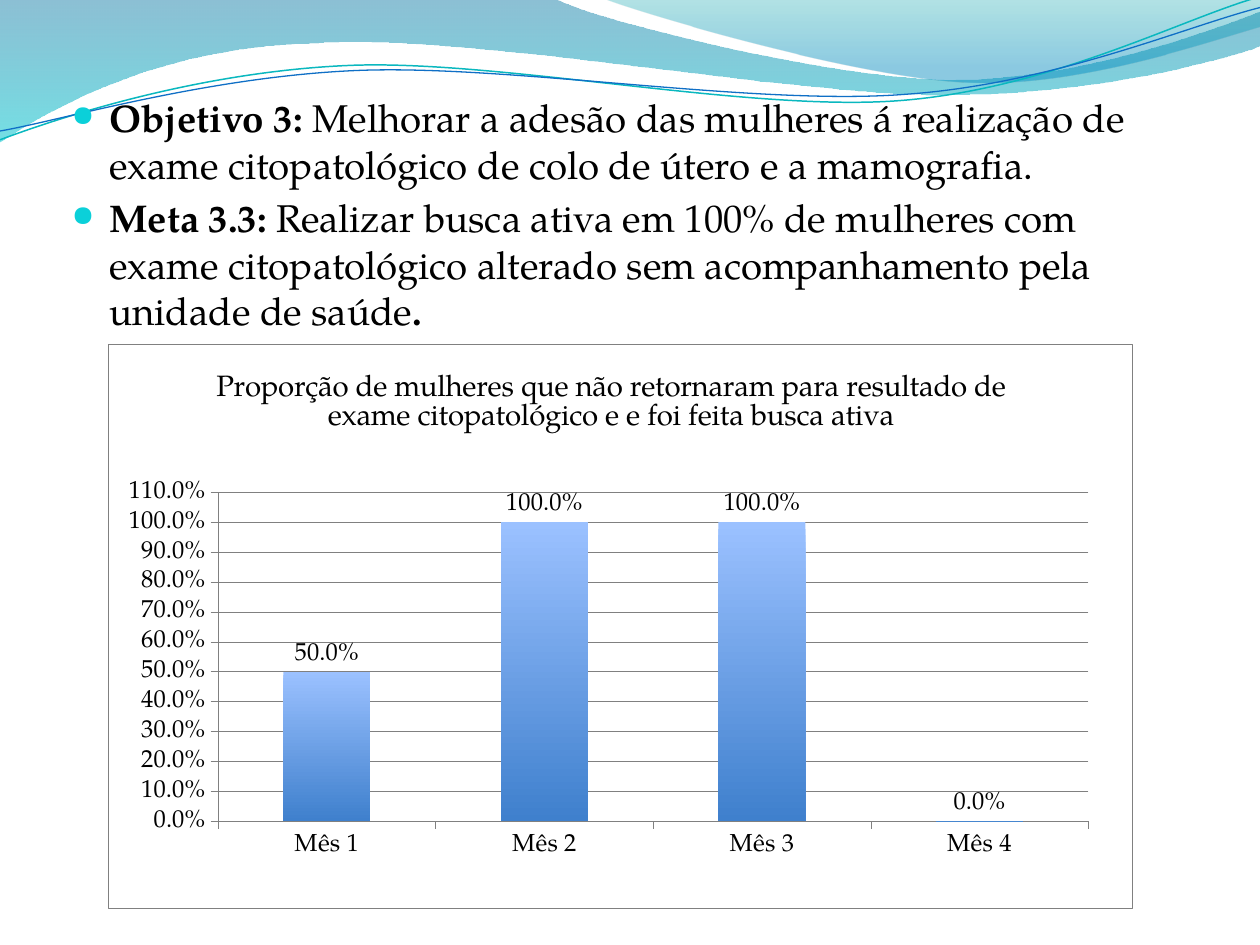
"""Build the slide on objective 3, target 3.3, with its monthly column chart."""
import lxml.etree
import pptx
import pptx.chart.data
import pptx.dml.color
import pptx.enum.chart
import pptx.oxml
import pptx.oxml.ns
import pptx.util
from pptx.oxml.ns import qn
from pptx.util import Inches, Pt

FONT = "TeX Gyre Pagella"
GREY = "808080"
BODY_SIZE = 22

GOALS = [
    [("Objetivo 3: ", True),
     ("Melhorar a adesão das mulheres á realização de exame citopatológico "
      "de colo de útero e a mamografia.", False)],
    [("Meta 3.3:", True),
     (" Realizar busca ativa em 100% de mulheres com exame citopatológico "
      "alterado sem acompanhamento pela unidade de saúde", False),
     (".", True)],
]
CHART_TITLE = ("Proporção de mulheres que não retornaram para resultado de "
               "exame citopatológico e e foi feita busca ativa")
MONTHS = ["Mês 1", "Mês 2", "Mês 3", "Mês 4"]
SHARES = [0.5, 1, 1, 0]
BAR_STOPS = [(0, "9BC1FF", 100), (1, "3F80CD", 100)]

BANDS = [
    ([(0, 0), (4.4, -0.01),
      (4.76, 0.17, 6.64, 0.63, 7.58, 0.63), (8.53, 0.63, 9.58, 0.26, 10, 0.09),
      (10.01, 0.36),
      (9.83, 0.44, 8.7, 0.76, 7.46, 0.75), (6.22, 0.75, 3.82, 0.28, 2.57, 0.34),
      (1.29, 0.36, 0.46, 0.83, -0.01, 1.13)],
     [(0, "0074A1", 45), (1, "00C6CF", 55)]),
    ([(4.79, -0.01),
      (5.09, 0.11, 6.82, 0.62, 7.69, 0.65), (8.56, 0.69, 9.61, 0.32, 10, 0.21),
      (10, 0)],
     [(0, "00A1A9", 30), (0.8, "008BBF", 45)]),
]
RIPPLES = [
    ([(0, 1.11),
      (0.48, 0.93, 1.58, 0.57, 2.77, 0.52), (3.95, 0.47, 5.93, 0.89, 7.13, 0.8),
      (8.33, 0.71, 9.38, 0.15, 9.98, -0.02)], "0AB8BF", 0.85),
    ([(0, 1.04),
      (0.47, 0.96, 1.64, 0.61, 2.83, 0.56), (4.03, 0.51, 5.97, 0.84, 7.17, 0.75),
      (8.36, 0.67, 9.41, 0.21, 10, 0.06)], "0F6FC6", 0.75),
]


def rgb(value):
    return pptx.dml.color.RGBColor.from_string(value)


def set_gradient(fill, stops):
    fill.gradient()
    fill.gradient_angle = 270
    for stop, (position, color, _) in zip(fill.gradient_stops, stops):
        stop.position = position
        stop.color.rgb = rgb(color)


def set_line(line, color, width):
    line.color.rgb = rgb(color)
    line.width = Pt(width)


def add_wave(slide, segments, close):
    anchors = [(Inches(segment[-2]), Inches(segment[-1])) for segment in segments]
    builder = slide.shapes.build_freeform(*anchors[0])
    builder.add_line_segments(anchors[1:], close=close)
    wave = builder.convert_to_shape()
    wave.shadow.inherit = False
    edges = list(wave._element.iter(qn("a:lnTo")))
    for edge, segment in zip(edges, segments[1:]):
        if len(segment) == 6:
            edge.tag = qn("a:cubicBezTo")
            for index, (x, y) in enumerate((segment[:2], segment[2:4])):
                control = lxml.etree.Element(
                    qn("a:pt"), x=str(Inches(x) - builder.shape_offset_x),
                    y=str(Inches(y) - builder.shape_offset_y))
                edge.insert(index, control)
    return wave


def add_header(slide):
    for segments, stops in BANDS:
        band = add_wave(slide, segments, True)
        set_gradient(band.fill, stops)
        band.line.fill.background()
        colors = band._element.spPr.iter(qn("a:srgbClr"))
        for color, (_, _, opacity) in zip(colors, stops):
            lxml.etree.SubElement(color, qn("a:alpha"), val=str(opacity * 1000))
    for segments, color, width in RIPPLES:
        ripple = add_wave(slide, segments, False)
        ripple.fill.background()
        set_line(ripple.line, color, width)


def add_goals(slide):
    frame = slide.shapes.add_textbox(Inches(0.47), Inches(0.7), Inches(9), Inches(2.11)).text_frame
    frame.word_wrap = True
    for index, goal in enumerate(GOALS):
        paragraph = frame.add_paragraph() if index else frame.paragraphs[0]
        paragraph.space_before = Pt(BODY_SIZE * 0.2)
        properties = paragraph._p.get_or_add_pPr()
        properties.set("marL", str(Inches(0.3)))
        properties.set("indent", str(-Inches(0.3)))
        color = lxml.etree.SubElement(properties, qn("a:buClr"))
        lxml.etree.SubElement(color, qn("a:srgbClr"), val="0BD0D9")
        lxml.etree.SubElement(properties, qn("a:buSzPct"), val="75000")
        lxml.etree.SubElement(properties, qn("a:buChar"), char="●")
        for text, bold in goal:
            run = paragraph.add_run()
            run.text = text
            set_font(run.font, BODY_SIZE, bold)


def set_font(font, size, bold=False):
    font.name = FONT
    font.size = Pt(size)
    font.bold = bold
    font.color.rgb = rgb("000000")


def set_layout(parent, index, **settings):
    for previous in parent.findall(qn("c:layout")):
        parent.remove(previous)
    layout = lxml.etree.Element(qn("c:layout"))
    manual = lxml.etree.SubElement(layout, qn("c:manualLayout"))
    for name, value in settings.items():
        lxml.etree.SubElement(manual, qn("c:" + name), val=str(value))
    parent.insert(index, layout)


def area_properties(border):
    line = (f'<a:ln w="{Pt(0.25)}"><a:solidFill><a:srgbClr val="{GREY}"/></a:solidFill></a:ln>'
            if border else "<a:ln><a:noFill/></a:ln>")
    return pptx.oxml.parse_xml(
        f'<c:spPr {pptx.oxml.ns.nsdecls("c", "a")}><a:solidFill>'
        f'<a:srgbClr val="FFFFFF"/></a:solidFill>{line}</c:spPr>')


def add_share_chart(slide):
    data = pptx.chart.data.CategoryChartData(number_format="0.0%")
    data.categories = MONTHS
    data.add_series(CHART_TITLE, SHARES)
    chart = slide.shapes.add_chart(
        pptx.enum.chart.XL_CHART_TYPE.COLUMN_CLUSTERED,
        Inches(0.86), Inches(2.73), Inches(8.13), Inches(4.48), data).chart
    set_font(chart.font, 14)
    chart.has_legend = False
    chart.has_title = True
    title = chart.chart_title.text_frame
    title.text = CHART_TITLE
    set_font(title.paragraphs[0].runs[0].font, 16.8)
    set_layout(chart.chart_title._element, 1, xMode="edge", yMode="edge", x=0.1, y=0.04)

    for axis in (chart.category_axis, chart.value_axis):
        axis.major_tick_mark = pptx.enum.chart.XL_TICK_MARK.OUTSIDE
        set_line(axis.format.line, GREY, 0.25)
    shares = chart.value_axis
    shares.minimum_scale, shares.maximum_scale, shares.major_unit = 0, 1.1, 0.1
    shares.tick_labels.number_format = "0.0%"
    shares.tick_labels.number_format_is_linked = False
    set_line(shares.major_gridlines.format.line, GREY, 0.25)

    plot = chart.plots[0]
    plot.gap_width = 150
    plot.vary_by_categories = False
    set_gradient(plot.series[0].format.fill, BAR_STOPS)
    plot.has_data_labels = True
    labels = plot.data_labels
    labels.show_value = True
    labels.number_format = "0.0%"
    labels.number_format_is_linked = False
    labels.position = pptx.enum.chart.XL_LABEL_POSITION.OUTSIDE_END
    set_font(labels.font, 14)

    body = chart._chartSpace.chart
    set_layout(body.plotArea, 0, layoutTarget="inner", xMode="edge", yMode="edge",
               x=0.107, y=0.263, w=0.85, h=0.583)
    body.plotArea.append(area_properties(False))
    body.addnext(area_properties(True))


def main():
    deck = pptx.Presentation()
    deck.slide_width, deck.slide_height = Inches(10), Inches(7.5)
    slide = deck.slides.add_slide(deck.slide_layouts[6])
    add_header(slide)
    add_goals(slide)
    add_share_chart(slide)
    deck.save("out.pptx")


if __name__ == "__main__":
    main()
